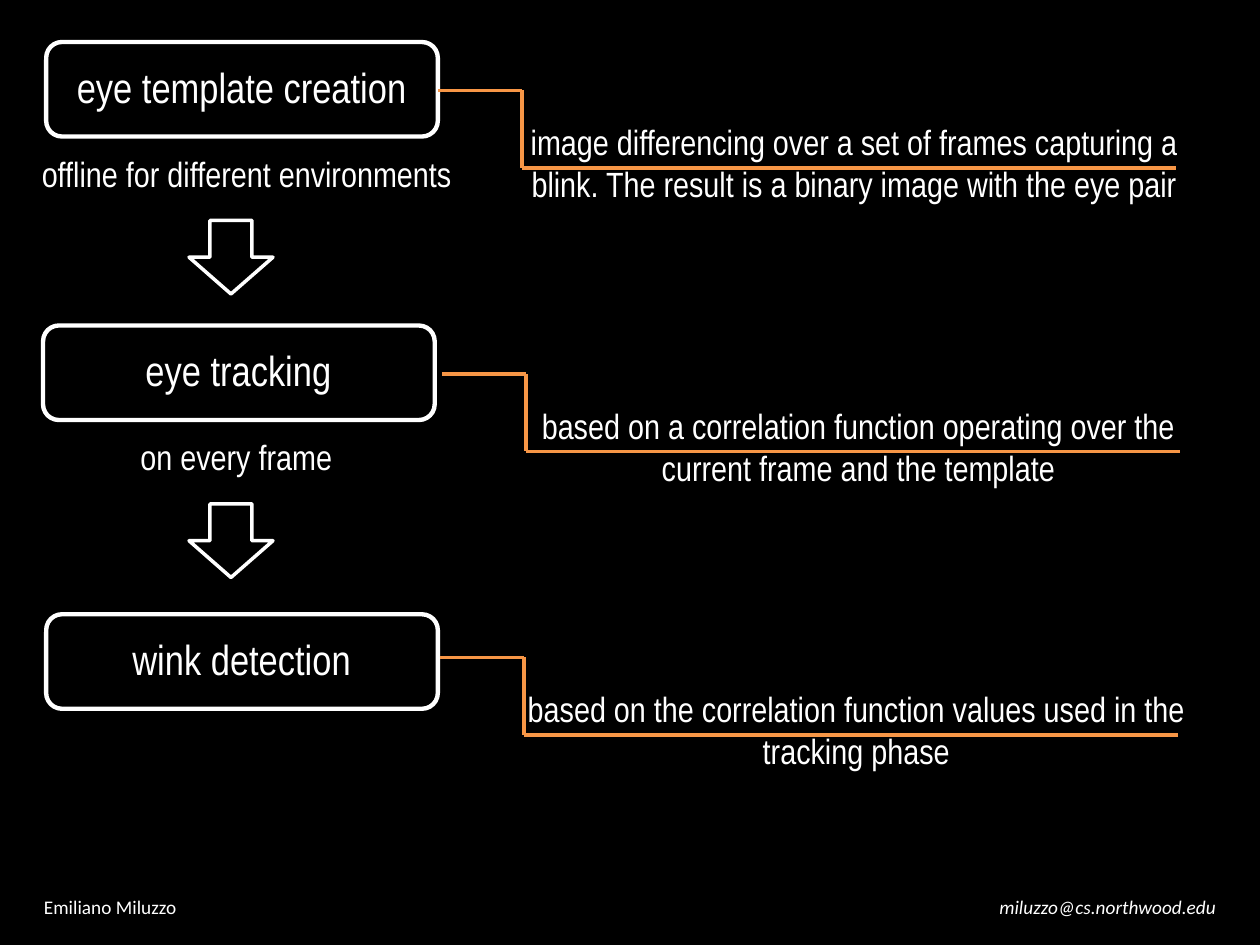
"""Build the slide of the three eye detection steps with their explanations."""
from lxml import etree
from pptx import Presentation
from pptx import util as u
from pptx.dml.color import RGBColor
from pptx.enum import shapes, text
from pptx.oxml.ns import qn

BLACK = RGBColor(0x00, 0x00, 0x00)
WHITE = RGBColor(0xFF, 0xFF, 0xFF)
ORANGE = RGBColor(0xF7, 0x96, 0x46)
LEFT, CENTER = text.PP_ALIGN.LEFT, text.PP_ALIGN.CENTER

deck = Presentation()
deck.slide_width, deck.slide_height = u.Inches(10), u.Inches(7.5)
COL, ROW = deck.slide_width / 120, deck.slide_height / 90
PITCH = 27

slide = deck.slides.add_slide(deck.slide_layouts[6])
slide.background.fill.solid()
slide.background.fill.fore_color.rgb = BLACK


def place(col, row, cols, rows):
    return int(col * COL), int(row * ROW), int(cols * COL), int(rows * ROW)


def write(lines, area, size, face="Arial Narrow", align=CENTER, italic=False):
    frame = slide.shapes.add_textbox(*place(*area)).text_frame
    frame.word_wrap = True
    frame.vertical_anchor = text.MSO_ANCHOR.MIDDLE
    frame.text = lines
    for paragraph in frame.paragraphs:
        paragraph.alignment = align
        font = paragraph.font
        font.name, font.size, font.italic = face, u.Pt(size), italic
        font.color.rgb = WHITE


steps = [
    ("eye template creation", 4, 2, 49.7,
     "image differencing over a set of frames capturing a\n"
     "blink. The result is a binary image with the eye pair"),
    ("eye tracking", 3.7, 29, 50.1,
     "based on a correlation function operating over the\n"
     "current frame and the template"),
    ("wink detection", 4, 56.5, 49.9,
     "based on the correlation function values used in the tracking phase"),
]
captions = [("offline for different environments", -1), ("on every frame", -2)]

outlines = [(shapes.MSO_SHAPE.ROUNDED_RECTANGLE, (col + 0.4, row + 2, 37.3, 9), 2.5)
            for _, col, row, _, _ in steps]
outlines += [(shapes.MSO_SHAPE.DOWN_ARROW, (18, 21 + PITCH * i, 8, 7), 2)
             for i in range(len(captions))]
for preset, area, weight in outlines:
    outline = slide.shapes.add_shape(preset, *place(*area))
    outline.shadow.inherit = False
    outline.fill.background()
    outline.line.color.rgb = WHITE
    outline.line.width = u.Pt(weight)

for i, (step, col, row, knee, detail) in enumerate(steps):
    write(step, (col, row, 38, 12.5), 24)
    top, bottom = 8.6 + PITCH * i, 16 + PITCH * i
    bends = [(knee - 8, top), (knee, top), (knee, bottom), (knee + 62.3, bottom)]
    for (x1, y1), (x2, y2) in zip(bends, bends[1:]):
        leader = slide.shapes.add_connector(
            shapes.MSO_CONNECTOR.STRAIGHT, *place(x1, y1, x2, y2))
        leader.line.color.rgb = ORANGE
        leader.line.width = u.Pt(2)
        etree.SubElement(leader._element.spPr, qn("a:effectLst"))
    write(detail, (knee - 2, 7 + PITCH * i, 67.3, 17), 20)

for i, (caption, col) in enumerate(captions):
    write(caption, (col, 13 + PITCH * i, 49, 7), 20)

write("Emiliano Miluzzo", (3, 84, 32, 4.8), 11, "Calibri", LEFT)
write("miluzzo@cs.northwood.edu", (83, 84, 45, 4.8), 11, "Calibri", italic=True)

deck.save("out.pptx")
